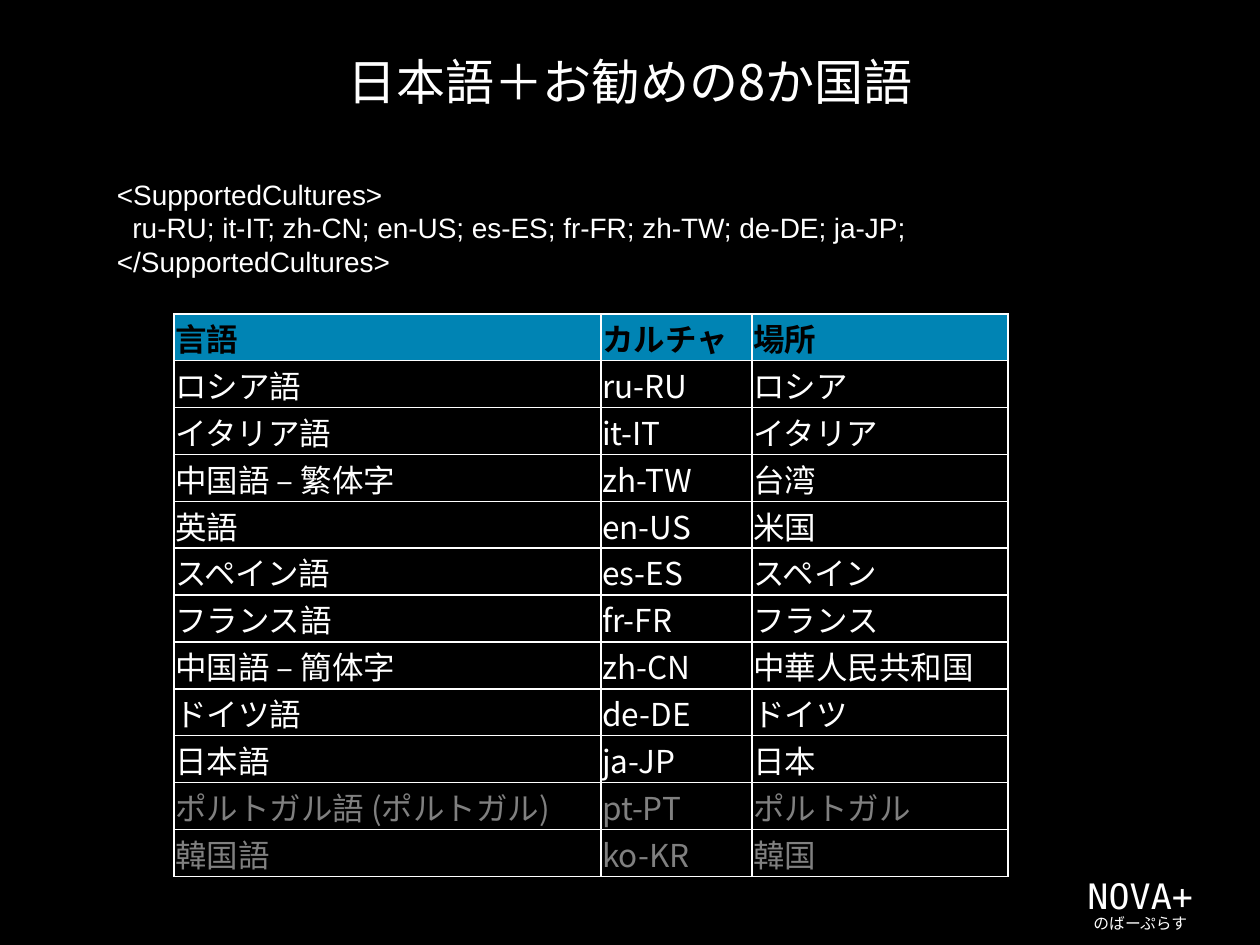
from dataclasses import dataclass

from lxml.etree import SubElement
from pptx import Presentation
from pptx.dml.color import RGBColor
from pptx.enum.text import MSO_ANCHOR as Anchor, MSO_AUTO_SIZE as AutoSize, PP_ALIGN as Align
from pptx.oxml.ns import qn
from pptx.util import Inches, Pt


@dataclass(frozen=True)
class Theme:
    black: str = "000000"
    white: str = "FFFFFF"
    gray: str = "808080"
    header: str = "0084B4"
    japanese: str = "Noto Sans CJK JP"
    latin: str = "Arial"
    mono: str = "DejaVu Sans Mono"
    title: int = 28
    brand: int = 20
    body: int = 18
    code: int = 16
    caption: int = 9
    border: int = 1


THEME = Theme()

LANGUAGES = [
    ("言語", "カルチャ", "場所"),
    ("ロシア語", "ru-RU", "ロシア"),
    ("イタリア語", "it-IT", "イタリア"),
    ("中国語 – 繁体字", "zh-TW", "台湾"),
    ("英語", "en-US", "米国"),
    ("スペイン語", "es-ES", "スペイン"),
    ("フランス語", "fr-FR", "フランス"),
    ("中国語 – 簡体字", "zh-CN", "中華人民共和国"),
    ("ドイツ語", "de-DE", "ドイツ"),
    ("日本語", "ja-JP", "日本"),
    ("ポルトガル語 (ポルトガル)", "pt-PT", "ポルトガル"),
    ("韓国語", "ko-KR", "韓国"),
]
INACTIVE = {"pt-PT", "ko-KR"}
CODE = (
    "<SupportedCultures>\v"
    "  ru-RU; it-IT; zh-CN; en-US; es-ES; fr-FR; zh-TW; de-DE; ja-JP;\v"
    "</SupportedCultures>"
)


def format_runs(text_frame, size, font, color, bold=False, align=None):
    for paragraph in text_frame.paragraphs:
        paragraph.alignment = align
        for run in paragraph.runs:
            run.font.size = Pt(size)
            run.font.bold = bold
            run.font.color.rgb = RGBColor.from_string(color)
            run.font.name = font
            SubElement(run.font._element, qn("a:ea")).set("typeface", font)


def add_text(slide, box, text, size, font, align=None, anchor=Anchor.TOP, wrap=True):
    shape = slide.shapes.add_textbox(*map(Inches, box))
    text_frame = shape.text_frame
    text_frame.text = text
    text_frame.word_wrap = wrap
    text_frame.auto_size = AutoSize.NONE
    text_frame.vertical_anchor = anchor
    format_runs(text_frame, size, font, THEME.white, align=align)


def add_title(slide, box):
    add_text(slide, box, "日本語＋お勧めの8か国語", THEME.title, THEME.japanese,
             Align.CENTER, Anchor.MIDDLE)


def add_code(slide, box):
    add_text(slide, box, CODE, THEME.code, THEME.latin,
             anchor=Anchor.MIDDLE, wrap=False)


def add_brand(slide, box):
    left, top, width, height = box
    add_text(slide, (left, top, width, 0.44), "NOVA+", THEME.brand, THEME.mono,
             Align.CENTER, wrap=False)
    add_text(slide, (left, top + height - 0.25, width, 0.25), "のばーぷらす",
             THEME.caption, THEME.japanese, Align.CENTER)


def add_borders(cell):
    properties = cell._tc.get_or_add_tcPr()
    for side in ("lnL", "lnR", "lnT", "lnB"):
        line = SubElement(properties, qn(f"a:{side}"), w=str(Pt(THEME.border)))
        fill = SubElement(line, qn("a:solidFill"))
        SubElement(fill, qn("a:srgbClr"), val=THEME.white)


def add_language_table(slide, box):
    widths = (3.39, 1.2, 2.03)
    table = slide.shapes.add_table(len(LANGUAGES), len(widths), *map(Inches, box)).table
    table.horz_banding = False
    for column, width in zip(table.columns, widths):
        column.width = Inches(width)
    for row_index, values in enumerate(LANGUAGES):
        is_header = row_index == 0
        table.rows[row_index].height = Inches(box[3] / len(LANGUAGES))
        color = THEME.gray if values[1] in INACTIVE else THEME.white
        for column_index, value in enumerate(values):
            cell = table.cell(row_index, column_index)
            cell.text_frame.text = value
            cell.vertical_anchor = Anchor.MIDDLE
            cell.margin_left = cell.margin_right = cell.margin_top = Inches(0.01)
            cell.margin_bottom = 0
            add_borders(cell)
            if is_header:
                cell.fill.solid()
                cell.fill.fore_color.rgb = RGBColor.from_string(THEME.header)
            else:
                cell.fill.background()
            format_runs(cell.text_frame, THEME.body, THEME.japanese,
                        THEME.black if is_header else color, bold=is_header)


def main():
    presentation = Presentation()
    presentation.slide_width = Inches(10)
    presentation.slide_height = Inches(7.5)
    slide = presentation.slides.add_slide(presentation.slide_layouts[6])
    slide.background.fill.solid()
    slide.background.fill.fore_color.rgb = RGBColor.from_string(THEME.black)
    add_brand(slide, (8.53, 6.89, 1.04, 0.56))
    add_title(slide, (0.5, 0.3, 9, 0.69))
    add_language_table(slide, (1.38, 2.49, 6.62, 3.88))
    add_code(slide, (0.83, 1.35, 6.65, 0.91))
    presentation.save("out.pptx")


if __name__ == "__main__":
    main()
